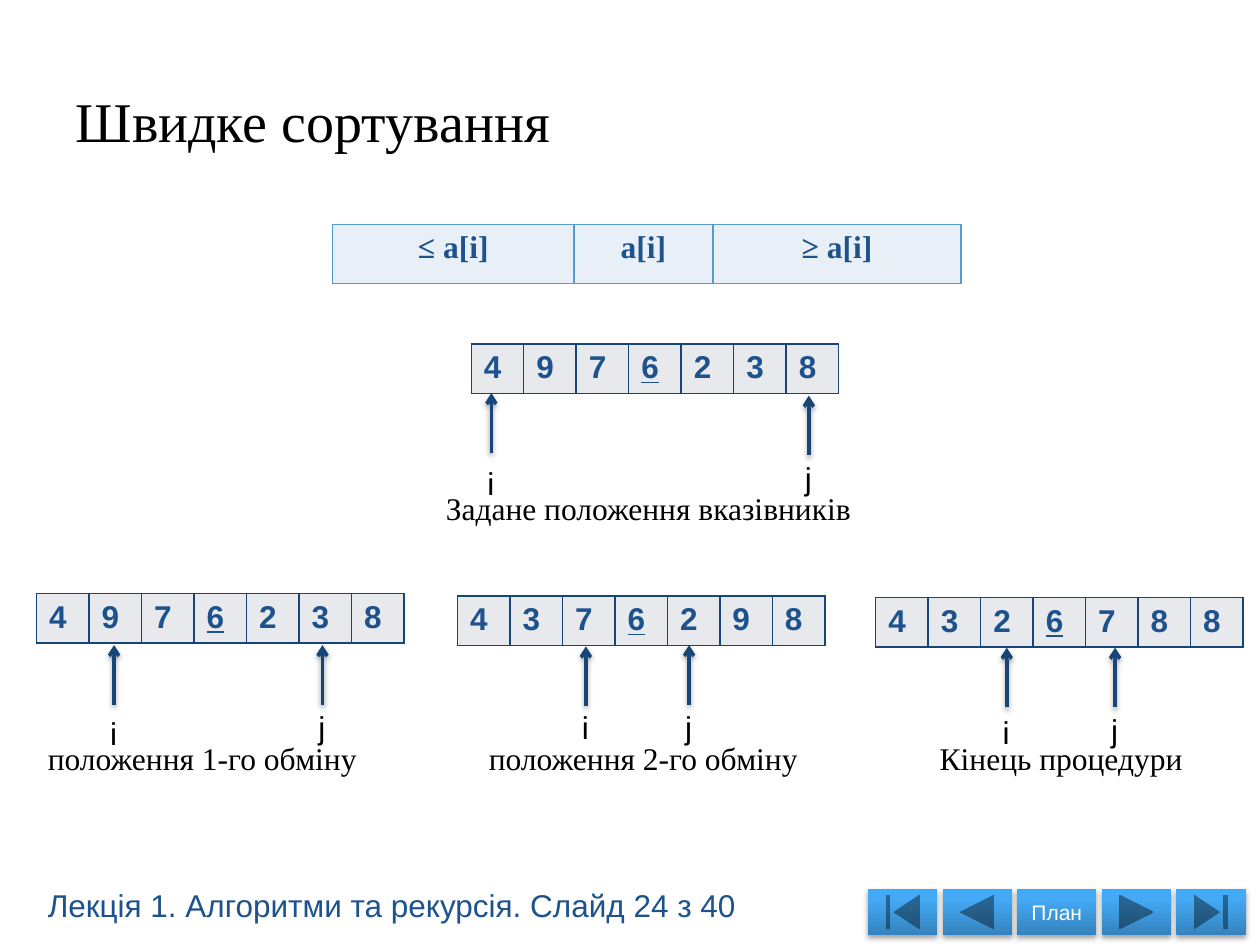
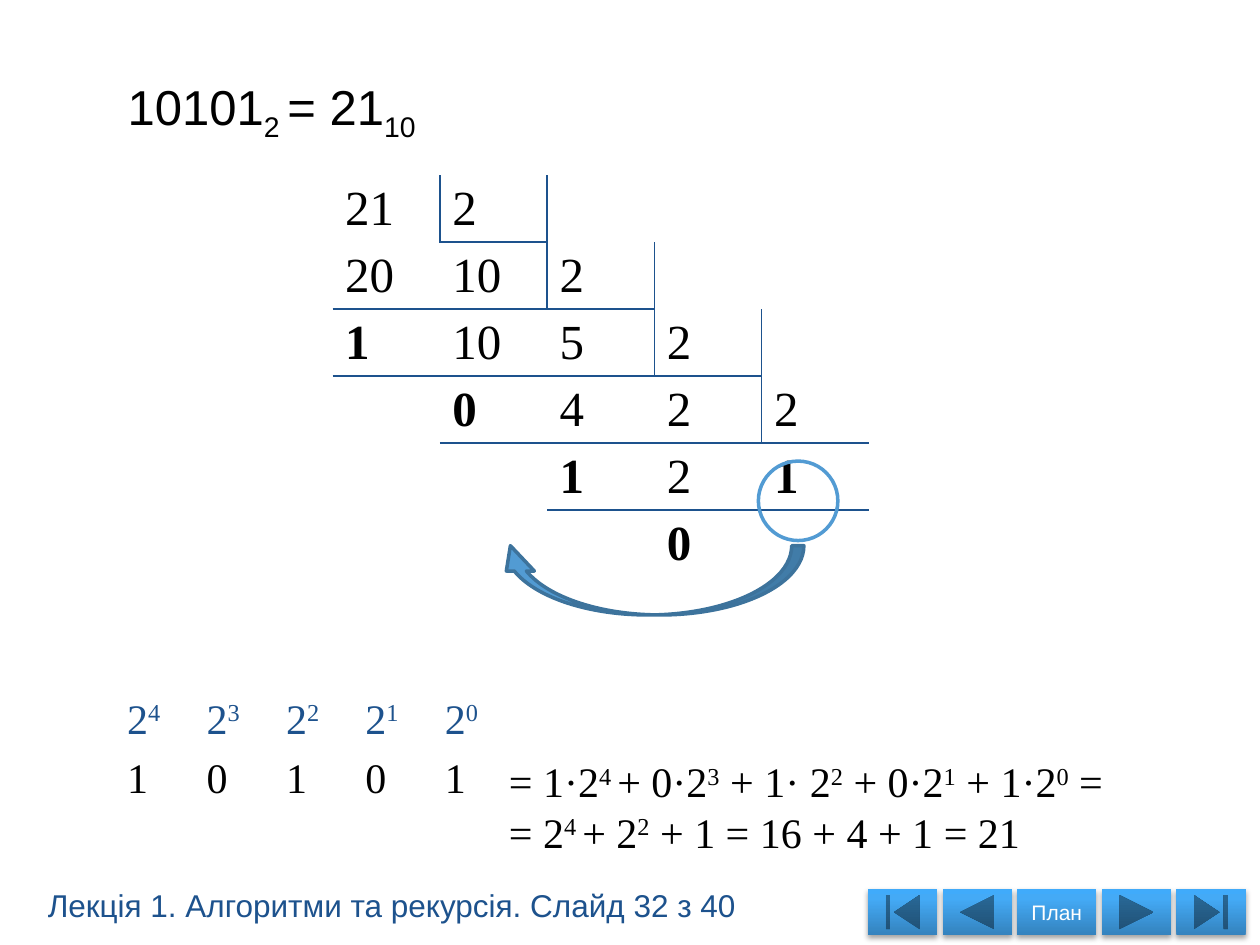
from lxml import etree
from pptx import Presentation
from pptx.dml.color import RGBColor
from pptx.enum.shapes import MSO_CONNECTOR, MSO_SHAPE
from pptx.enum.text import MSO_ANCHOR, MSO_AUTO_SIZE, PP_ALIGN
from pptx.oxml import parse_xml
from pptx.oxml.ns import nsdecls, qn
from pptx.util import Pt

BLACK = RGBColor(0x00, 0x00, 0x00)
WHITE = RGBColor(0xFF, 0xFF, 0xFF)
BLUE = RGBColor(0x1D, 0x52, 0x8D)
NAVY = RGBColor(0x17, 0x45, 0x78)
SKY = RGBColor(0x52, 0x9B, 0xD3)
STEEL = RGBColor(0x3D, 0x73, 0x9C)
PALE_BLUE = RGBColor(0xE9, 0xEF, 0xF7)
PALE_GRAY = RGBColor(0xE8, 0xE9, 0xEC)

SANS, SERIF = "Arial", "Times New Roman"
LEFT, CENTER = PP_ALIGN.LEFT, PP_ALIGN.CENTER
TOP, MIDDLE = MSO_ANCHOR.TOP, MSO_ANCHOR.MIDDLE
NO_AUTOFIT = MSO_AUTO_SIZE.NONE
STRAIGHT = MSO_CONNECTOR.STRAIGHT
OVAL, CURVED_UP_ARROW = MSO_SHAPE.OVAL, MSO_SHAPE.CURVED_UP_ARROW
FIRST, LAST = MSO_SHAPE.ACTION_BUTTON_BEGINNING, MSO_SHAPE.ACTION_BUTTON_END
PREVIOUS = MSO_SHAPE.ACTION_BUTTON_BACK_OR_PREVIOUS
NEXT = MSO_SHAPE.ACTION_BUTTON_FORWARD_OR_NEXT
PLAN = MSO_SHAPE.ACTION_BUTTON_CUSTOM

NO_STYLE = "{2D5ABB26-0587-4C30-8999-92F81FD0307C}"
SHADOW = (f'<a:effectLst {nsdecls("a")}><a:outerShdw blurRad="39370" dist="21000" '
          'dir="5400000" rotWithShape="0"><a:srgbClr val="000000">'
          '<a:alpha val="37000"/></a:srgbClr></a:outerShdw></a:effectLst>')
GRADIENT = (f'<a:gradFill {nsdecls("a")} rotWithShape="1"><a:gsLst>'
            '<a:gs pos="0"><a:srgbClr val="3483BE"/></a:gs>'
            '<a:gs pos="80000"><a:srgbClr val="44AAF6"/></a:gs>'
            '<a:gs pos="100000"><a:srgbClr val="40ABFB"/></a:gs>'
            '</a:gsLst><a:lin ang="16200000" scaled="0"/></a:gradFill>')


def write(p, text, size, font, color, bold=False, align=LEFT, baseline=30):
    """Fill a paragraph; every second part between bars is raised or lowered."""
    p.alignment = align
    for n, part in enumerate(text.split("|")):
        if not part:
            continue
        r = p.add_run()
        r.text = part
        r.font.size, r.font.name, r.font.bold = Pt(size), font, bold
        r.font.color.rgb = color
        if n % 2:
            r._r.get_or_add_rPr().set("baseline", str(baseline * 1000))


def add_table(s, left, top, widths, row_height, rows, size, font, color,
              bold=False, align=LEFT, fill=None, line=None, edges=None):
    """Add a plain table; edges maps (row, column) to sides, None means all."""
    table = s.shapes.add_table(len(rows), len(widths), Pt(left), Pt(top), Pt(sum(widths)),
                               Pt(row_height * len(rows))).table
    table.first_row = table.horz_banding = False
    table._tbl.tblPr.find(qn("a:tableStyleId")).text = NO_STYLE
    for column, width in zip(table.columns, widths):
        column.width = Pt(width)
    for i, values in enumerate(rows):
        table.rows[i].height = Pt(row_height)
        for j, value in enumerate(values):
            cell = table.cell(i, j)
            write(cell.text_frame.paragraphs[0], value, size, font, color, bold, align)
            tc_pr = cell._tc.get_or_add_tcPr()
            sides = "LRTB" if edges is None else edges.get((i, j), "")
            for side in "LRTB":
                if line is not None and side in sides:
                    ln = etree.SubElement(tc_pr, qn("a:ln" + side), w="12700")
                    solid = etree.SubElement(ln, qn("a:solidFill"))
                    etree.SubElement(solid, qn("a:srgbClr"), val=str(line))
            if fill is None:
                cell.fill.background()
            else:
                cell.fill.solid()
                cell.fill.fore_color.rgb = fill
    return table


prs = Presentation()
prs.slide_width, prs.slide_height = Pt(720), Pt(540)
texts = []  # slide, left, top, width, height, wrap, lines, size, font, color

# Titles, footers and navigation buttons
slides = []
for number, title, left, top, size, font in (
        (24, "Швидке сортування", 36, 46, 32, SERIF),
        (32, "10101|2 |= 21|10", 65.8, 40, 28, SANS)):
    s = prs.slides.add_slide(prs.slide_layouts[5])
    slides.append(s)
    sp = s.shapes.title
    sp.left, sp.top, sp.width, sp.height = Pt(left), Pt(top), Pt(600), Pt(50)
    tf = sp.text_frame
    tf.vertical_anchor, tf.auto_size = TOP, NO_AUTOFIT
    write(tf.paragraphs[0], title, size, font, BLACK, baseline=-25)
    footer = f"Лекція 1. Алгоритми та рекурсія. Слайд {number} з 40"
    texts.append((s, 20.2, 502.6, 411, 29, False, [footer], 18, SANS, BLUE))

    left = 496
    for kind in (FIRST, PREVIOUS, PLAN, NEXT, LAST):
        width = 45.4 if kind == PLAN else 39.6
        sp = s.shapes.add_shape(kind, Pt(left), Pt(508.3), Pt(width), Pt(25.9))
        sp.line.fill.background()
        sp._element.spPr.insert(2, parse_xml(GRADIENT))
        sp._element.spPr.append(parse_xml(SHADOW))
        if kind == PLAN:
            tf = sp.text_frame
            tf.margin_left = tf.margin_right = 0
            tf.vertical_anchor = MIDDLE
            write(tf.paragraphs[0], "План", 12, SANS, WHITE, align=CENTER)
        left += width + 3
sorting, binary = slides

# Quick sort: partition scheme
add_table(sorting, 190, 128.2, [138, 79.4, 141.8], 33.8, [["≤ a[i]", "a[i]", "≥ a[i]"]],
          18, SERIF, BLUE, True, CENTER, PALE_BLUE, SKY)

# Quick sort: array states, each with pointers i and j as (x, arrow tip, label top)
states = (
    (269.3, 196.6, "4976238", "Задане положення вказівників", 247.7, 275.8, 248.4,
     ((280.8, 224.6, 261.4), (462.2, 226.1, 258.5))),
    (20.9, 339.1, "4976238", "положення 1-го обміну", 20.2, 419, 193,
     ((65.2, 368.6, 404.6), (184.3, 368.6, 401))),
    (261.4, 340.6, "4376298", "положення 2-го обміну", 272.2, 419, 193,
     ((334.8, 369.4, 401), (393.8, 368.6, 401))),
    (500.4, 341.3, "4326788", "Кінець процедури", 529.9, 419, 154.8,
     ((575.3, 370.1, 403.9), (637.2, 370.1, 402.5))),
)
for left, top, digits, caption, cap_left, cap_top, cap_width, pointers in states:
    table = add_table(sorting, left, top, [30] * 7, 28.4, [digits], 18, SANS, BLUE,
                      True, fill=PALE_GRAY, line=NAVY)
    pivot = table.cell(0, 3).text_frame.paragraphs[0].runs[0]
    pivot.font.underline = True
    for name, (x, tip, label_top) in zip("ij", pointers):
        arrow = sorting.shapes.add_connector(STRAIGHT, Pt(x), Pt(tip + 34), Pt(x), Pt(tip))
        arrow.line.color.rgb, arrow.line.width = NAVY, Pt(2)
        sp_pr = arrow._element.spPr
        etree.SubElement(sp_pr.find(qn("a:ln")), qn("a:tailEnd"), type="arrow")
        sp_pr.append(parse_xml(SHADOW))
        texts.append((sorting, x - 9.4, label_top, 18.8, 29, False, [name], 18, SANS, BLACK))
    texts.append((sorting, cap_left, cap_top, cap_width, 29, False, [caption],
                  18, SERIF, BLACK))

# Binary: repeated division by two, stepping down one cell at a time
division = (
    ("21", "2", "", "", ""),
    ("20", "10", "2", "", ""),
    ("1", "10", "5", "2", ""),
    ("", "0", "4", "2", "2"),
    ("", "", "1", "2", "1"),
    ("", "", "", "0", ""),
)
edges = {}
for k in range(4):
    for cell, sides in (((k, k), "R"), ((k, k + 1), "LB"), ((k + 1, k + 1), "T"),
                        ((k + 1, k), "B"), ((k + 2, k), "T")):
        edges[cell] = edges.get(cell, "") + sides
table = add_table(binary, 190, 100, [61.3] * 5, 38.3, division, 28, SERIF, BLACK,
                  line=BLUE, edges=edges)
for i, j in [(k + 2, k) for k in range(4)] + [(4, 4)]:
    table.cell(i, j).text_frame.paragraphs[0].runs[0].font.bold = True

# Binary: last quotient and reading direction
ring = binary.shapes.add_shape(OVAL, Pt(433.4), Pt(263.5), Pt(45.4), Pt(45.4))
ring.shadow.inherit = False
ring.fill.background()
ring.line.color.rgb, ring.line.width = SKY, Pt(2)

sweep = binary.shapes.add_shape(CURVED_UP_ARROW, Pt(283.7), Pt(311.8), Pt(175.7), Pt(39.6))
sweep._element.spPr.find(qn("a:xfrm")).set("flipH", "1")
for n, value in enumerate((0.175, 0.404, 0.366)):
    sweep.adjustments[n] = value
sweep.shadow.inherit = False
sweep.fill.solid()
sweep.fill.fore_color.rgb = SKY
sweep.line.color.rgb, sweep.line.width = STEEL, Pt(2)

# Binary: place values and check
powers = [f"2|{k}" for k in range(4, -1, -1)]
table = add_table(binary, 65.5, 394.6, [45.4] * 5, 34, [powers, "10101"], 24, SERIF, BLUE)
for j in range(5):
    table.cell(1, j).text_frame.paragraphs[0].runs[0].font.color.rgb = BLACK
check = ["= 1·2|4 |+ 0·2|3| + 1· 2|2| + 0·2|1| + 1·2|0| =",
         "= 2|4 |+ 2|2| + 1 = 16 + 4 + 1 = 21"]
texts.append((binary, 283.7, 428.4, 402.5, 65.5, True, check, 24, SERIF, BLACK))

# Text boxes
for s, left, top, width, height, wrap, lines, size, font, color in texts:
    tf = s.shapes.add_textbox(Pt(left), Pt(top), Pt(width), Pt(height)).text_frame
    tf.word_wrap = wrap
    for n, line in enumerate(lines):
        p = tf.add_paragraph() if n else tf.paragraphs[0]
        write(p, line, size, font, color)

prs.save("out.pptx")
